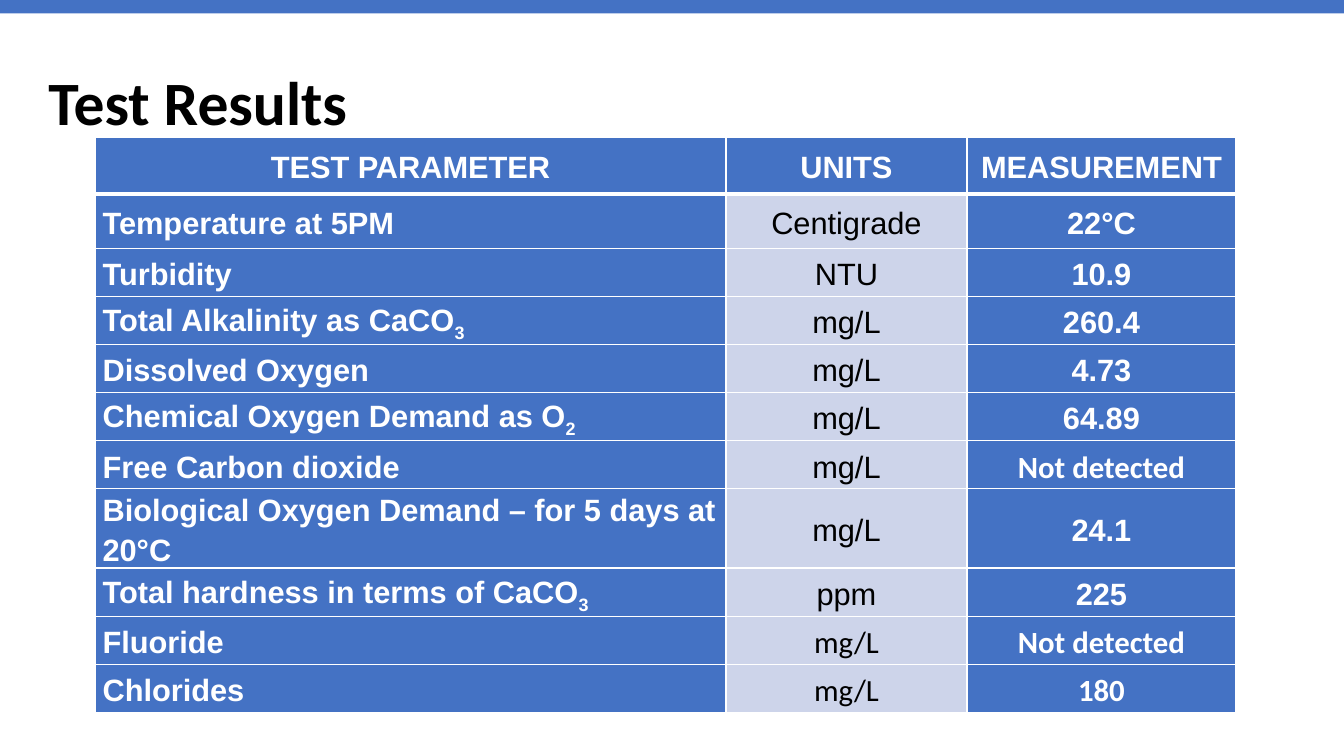
"""Build the water test results slide."""
from lxml.etree import SubElement as Sub
from pptx import Presentation
from pptx.dml.color import RGBColor
from pptx.enum.shapes import MSO_SHAPE as Shape
from pptx.enum.text import MSO_ANCHOR as Anchor, MSO_AUTO_SIZE as Auto, PP_ALIGN as Align
from pptx.oxml.ns import qn
from pptx.util import Pt

BLUE = RGBColor(0x44, 0x72, 0xC4)
PALE = RGBColor(0xCD, 0xD4, 0xEA)
WHITE = RGBColor(0xFF, 0xFF, 0xFF)
BLACK = RGBColor(0, 0, 0)
SANS, BODY = "Arial", "Calibri"

HEAD = ["TEST PARAMETER", "UNITS", "MEASUREMENT"]
ROWS = [
    ("Temperature at 5PM", "", "Centigrade", SANS, "22°C", SANS),
    ("Turbidity", "", "NTU", SANS, "10.9", SANS),
    ("Total Alkalinity as CaCO", "3", "mg/L", SANS, "260.4", SANS),
    ("Dissolved Oxygen", "", "mg/L", SANS, "4.73", SANS),
    ("Chemical Oxygen Demand as O", "2", "mg/L", SANS, "64.89", SANS),
    ("Free Carbon dioxide", "", "mg/L", SANS, "Not detected", BODY),
    ("Biological Oxygen Demand – for 5 days at 20°C", "", "mg/L", SANS, "24.1", SANS),
    ("Total hardness in terms of CaCO", "3", "ppm", SANS, "225", SANS),
    ("Fluoride", "", "mg/L", BODY, "Not detected", BODY),
    ("Chlorides", "", "mg/L", BODY, "180", BODY),
]
WIDTHS = [450.7, 172.1, 192.2]
TALLS = [40.3, 38.8] + [34.4] * 9


def apply(item, values):
    for name, value in values.items():
        setattr(item, name, value)


class Deck:
    def __init__(self):
        self.show = Presentation()
        apply(self.show, {"slide_width": Pt(960), "slide_height": Pt(540)})
        self.slide = self.show.slides.add_slide(self.show.slide_layouts[5])

    def text(self, para, words, font, size, color, bold, sub=""):
        for part, base in ((words, 0), (sub, -25000)):
            if part:
                run = para.add_run()
                run.text = part
                apply(run.font, {"name": font, "size": Pt(size), "bold": bold})
                run.font.color.rgb = color
                if base:
                    run._r.get_or_add_rPr().set("baseline", str(base))

    def title(self, words, left, top, width, height):
        box = self.slide.shapes.title
        apply(box, {"left": Pt(left), "top": Pt(top), "width": Pt(width), "height": Pt(height)})
        apply(box.text_frame, {"auto_size": Auto.NONE, "word_wrap": True,
                               "vertical_anchor": Anchor.MIDDLE})
        para = box.text_frame.paragraphs[0]
        apply(para, {"alignment": Align.LEFT, "line_spacing": 0.9})
        self.text(para, words, BODY, 44, BLACK, True)

    def bar(self, left, top, width, height):
        bar = self.slide.shapes.add_shape(Shape.RECTANGLE, Pt(left), Pt(top), Pt(width), Pt(height))
        bar.shadow.inherit = False
        bar.fill.solid()
        bar.fill.fore_color.rgb = BLUE
        bar.line.fill.background()

    def table(self, left, top):
        frame = self.slide.shapes.add_table(len(TALLS), len(WIDTHS), Pt(left), Pt(top),
                                            Pt(sum(WIDTHS)), Pt(sum(TALLS)))
        grid = frame.table
        for col, width in zip(grid.columns, WIDTHS):
            col.width = Pt(width)
        for row, tall in zip(grid.rows, TALLS):
            row.height = Pt(tall)
        for col, words in enumerate(HEAD):
            self.cell(grid, 0, col, words, SANS)
        for row, (name, sub, unit, face, value, font) in enumerate(ROWS, 1):
            self.cell(grid, row, 0, name, SANS, sub)
            self.cell(grid, row, 1, unit, face)
            self.cell(grid, row, 2, value, font)

    def cell(self, grid, row, col, words, font, sub=""):
        cell = grid.cell(row, col)
        plain = row > 0 and col == 1
        apply(cell, {"vertical_anchor": Anchor.MIDDLE, "margin_left": Pt(5.4),
                     "margin_right": Pt(5.4), "margin_top": 0, "margin_bottom": 0})
        self.edge(cell, row)
        cell.fill.solid()
        cell.fill.fore_color.rgb = PALE if plain else BLUE
        para = cell.text_frame.paragraphs[0]
        apply(para, {"alignment": Align.LEFT if row and not col else Align.CENTER,
                     "line_spacing": 1.15})
        self.text(para, words, font, 22, BLACK if plain else WHITE, not plain, sub)

    def edge(self, cell, row):
        thick = {"lnT": row == 1, "lnB": row == 0}
        for side in ("lnL", "lnR", "lnT", "lnB"):
            wide = Pt(3 if thick.get(side) else 1)
            line = Sub(cell._tc.get_or_add_tcPr(), qn("a:" + side), w=str(int(wide)))
            Sub(Sub(line, qn("a:solidFill")), qn("a:srgbClr"), val=str(WHITE))


def main():
    deck = Deck()
    deck.table(67.9, 98.2)
    deck.title("Test Results", 27.4, 52.6, 898.6, 45.4)
    deck.bar(0, 0, 960, 9.7)
    deck.show.save("out.pptx")


if __name__ == "__main__":
    main()
